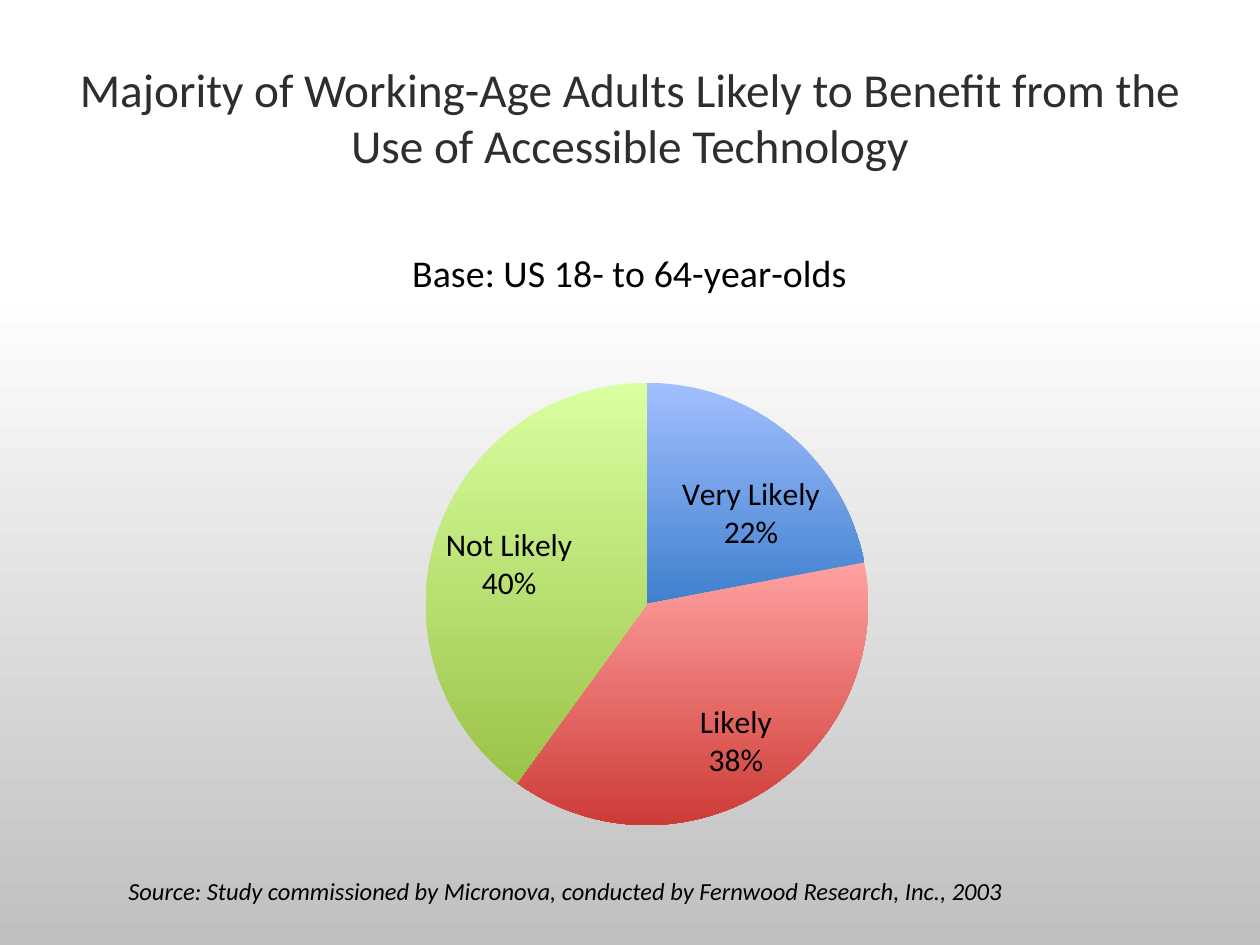
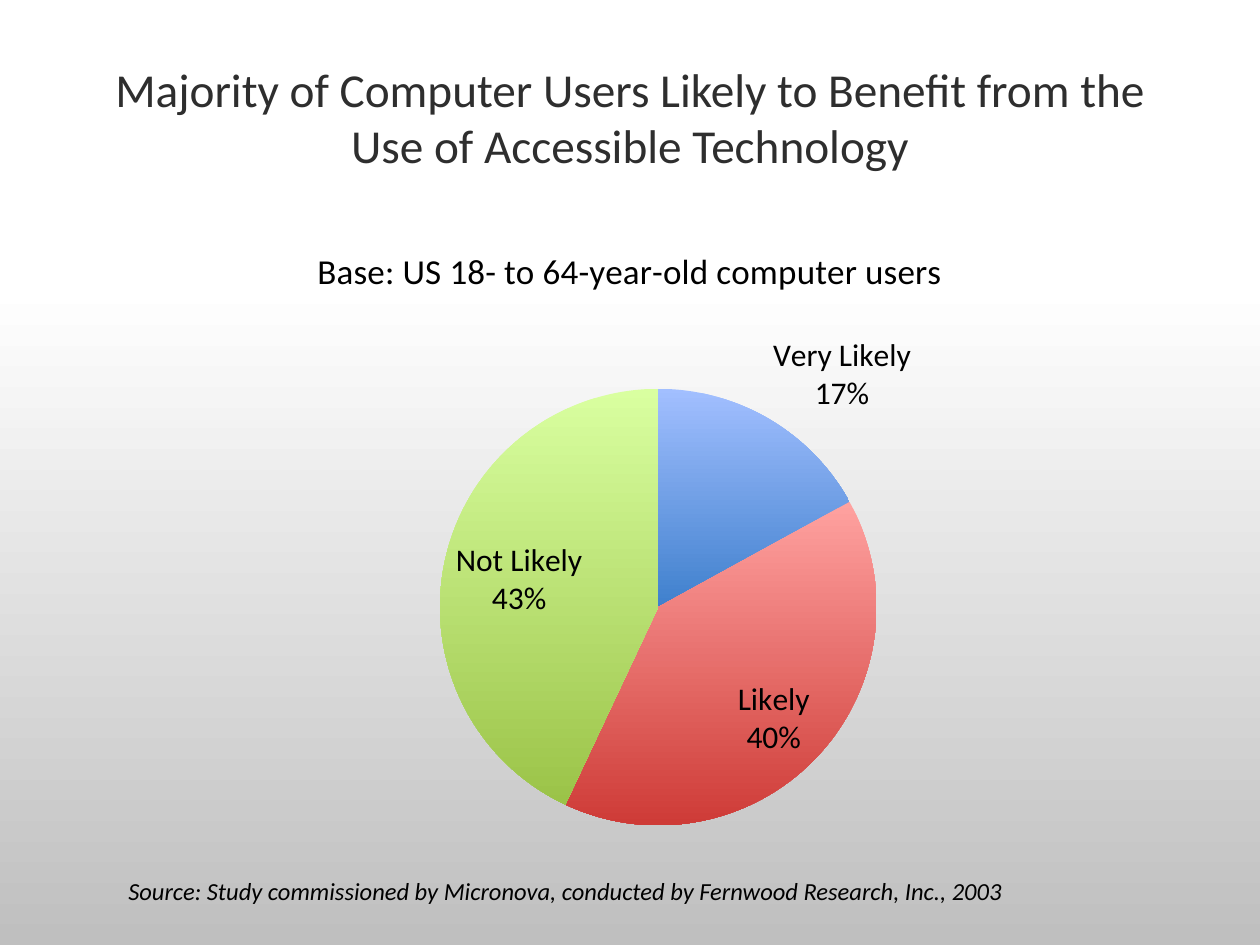
from pptx import Presentation
from pptx.chart.data import CategoryChartData
from pptx.dml.color import RGBColor
from pptx.enum.chart import XL_CHART_TYPE, XL_LABEL_POSITION
from pptx.enum.text import MSO_ANCHOR, MSO_AUTO_SIZE, PP_ALIGN
from pptx.oxml import parse_xml
from pptx.oxml.ns import nsdecls, qn
from pptx.util import Inches, Pt

PIE = XL_CHART_TYPE.PIE
BEST_FIT = XL_LABEL_POSITION.BEST_FIT
MIDDLE = MSO_ANCHOR.MIDDLE
NO_AUTOFIT = MSO_AUTO_SIZE.NONE
CENTER, LEFT = PP_ALIGN.CENTER, PP_ALIGN.LEFT

FONT = "Calibri"
TITLE_ONLY = 5
COLORS = {
    "title": "2E2E2E", "text": "000000",
    "page_top": "FFFFFF", "page_bottom": "BFBFBF",
    "blue_top": "A2BFFF", "blue_bottom": "3F80CD",
    "red_top": "FFA2A0", "red_bottom": "CE3B37",
    "green_top": "D9FFA0", "green_bottom": "9BC348",
}
SLICES = {"Very Likely": "blue", "Likely": "red", "Not Likely": "green"}
SOURCE = ("Source: Study commissioned by Micronova, "
          "conducted by Fernwood Research, Inc., 2003")

# Plot boxes are x, y, width, height as fractions of the chart frame.
SURVEYS = [
    {"title": "Majority of Working-Age Adults Likely to Benefit from the "
              "Use of Accessible Technology",
     "base": "Base: US 18- to 64-year-olds", "base_size": 21.6,
     "percents": (22, 38, 40), "plot_box": (0.32, 0.26, 0.39, 0.71)},
    {"title": "Majority of Computer Users Likely to Benefit from the "
              "Use of Accessible Technology",
     "base": "Base: US 18- to 64-year-old computer users", "base_size": 20,
     "percents": (17, 40, 43), "plot_box": (0.33, 0.27, 0.39, 0.7)},
]


def write_text(text_frame, text, size, color="text", align=LEFT, italic=False):
    text_frame.text = text
    paragraph = text_frame.paragraphs[0]
    paragraph.alignment = align
    font = paragraph.runs[0].font
    font.name, font.size = FONT, Pt(size)
    font.bold, font.italic = False, italic
    font.color.rgb = RGBColor.from_string(COLORS[color])


def fill_downwards(fill, name, start=0):
    """Blend the named top colour into its bottom colour, from start on."""
    fill.gradient()
    fill.gradient_angle = 270
    stops = zip(fill.gradient_stops, ("top", "bottom"), (start, 1))
    for stop, end, position in stops:
        stop.color.rgb = RGBColor.from_string(COLORS[f"{name}_{end}"])
        stop.position = position


presentation = Presentation()
presentation.slide_width, presentation.slide_height = Inches(10), Inches(7.5)
fill_downwards(presentation.slide_master.background.fill, "page", start=0.3)

for survey in SURVEYS:
    slide = presentation.slides.add_slide(presentation.slide_layouts[TITLE_ONLY])

    title = slide.shapes.title
    title.left, title.top = Inches(0.5), Inches(0.3)
    title.width, title.height = Inches(9), Inches(1.25)
    write_text(title.text_frame, survey["title"], 27, "title", CENTER)
    title.text_frame.vertical_anchor = MIDDLE
    title.text_frame.auto_size = NO_AUTOFIT

    chart_data = CategoryChartData()
    chart_data.categories = list(SLICES)
    chart_data.add_series(survey["base"], survey["percents"])
    chart = slide.shapes.add_chart(PIE, Inches(0.5), Inches(1.75),
                                   Inches(9), Inches(4.95), chart_data).chart
    chart.font.name, chart.font.size = FONT, Pt(18)
    chart.font.color.rgb = RGBColor.from_string(COLORS["text"])
    chart.has_legend = False
    chart.has_title = True
    write_text(chart.chart_title.text_frame, survey["base"],
               survey["base_size"], align=CENTER)

    pie = chart.plots[0]
    pie.vary_by_categories = True
    series = pie.series[0]
    for index, color in enumerate(SLICES.values()):
        slice_format = series.points[index].format
        fill_downwards(slice_format.fill, color)
        slice_format.line.fill.background()

    labels = series.data_labels
    labels.show_value = False
    labels.show_category_name = labels.show_percentage = True
    labels.number_format, labels.number_format_is_linked = "0%", False
    labels.position = BEST_FIT
    bubble_flag = next(series._element.iter(qn("c:showBubbleSize")))
    bubble_flag.addnext(parse_xml(
        f'<c:separator {nsdecls("c")}>\n</c:separator>'))

    plot_area = next(chart._chartSpace.iter(qn("c:plotArea")))
    for layout in plot_area.findall(qn("c:layout")):
        plot_area.remove(layout)
    x, y, width, height = survey["plot_box"]
    plot_area.insert(0, parse_xml(
        f'<c:layout {nsdecls("c")}><c:manualLayout>'
        '<c:layoutTarget val="inner"/>'
        '<c:xMode val="edge"/><c:yMode val="edge"/>'
        f'<c:x val="{x}"/><c:y val="{y}"/>'
        f'<c:w val="{width}"/><c:h val="{height}"/>'
        '</c:manualLayout></c:layout>'))

    source = slide.shapes.add_textbox(Inches(0.92), Inches(6.9),
                                      Inches(8.9), Inches(0.34))
    source.text_frame.word_wrap = True
    write_text(source.text_frame, SOURCE, 14, italic=True)

presentation.save("out.pptx")
